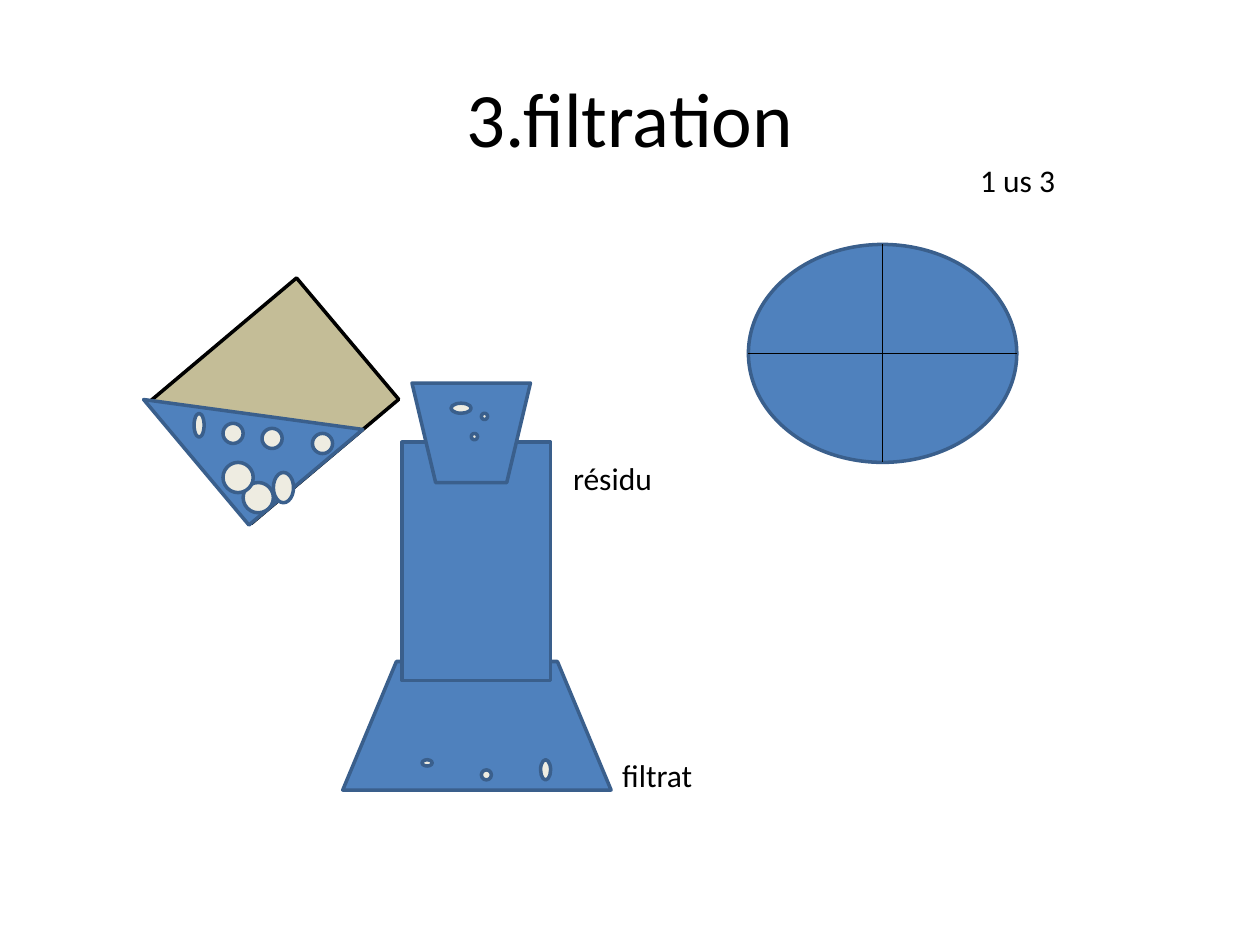
from dataclasses import dataclass
from lxml import etree
from pptx import Presentation
from pptx.dml.color import RGBColor
from pptx.enum.shapes import MSO_CONNECTOR as Line, MSO_SHAPE as Kind
from pptx.enum.text import MSO_ANCHOR as Anchor, PP_ALIGN as Align
from pptx.oxml.ns import qn
from pptx.util import Inches, Pt


@dataclass(frozen=True)
class Theme:
    font: str = "Calibri"
    title: int = 44
    body: int = 18
    edge: float = 2
    thin: float = 0.75
    ink: str = "000000"
    blue: str = "4F81BD"
    rim: str = "3A5F8C"
    tan: str = "C4BD97"
    grain: str = "EEECE1"


THEME = Theme()


def color(code):
    return RGBColor.from_string(code)


def add_text(slide, text, box, size=THEME.body, align=Align.LEFT, anchor=Anchor.TOP):
    frame = slide.shapes.add_textbox(*map(Inches, box)).text_frame
    frame.word_wrap = True
    frame.vertical_anchor = anchor
    para = frame.paragraphs[0]
    para.alignment = align
    run = para.add_run()
    run.text = text
    run.font.name = THEME.font
    run.font.size = Pt(size)
    run.font.color.rgb = color(THEME.ink)


def add_part(slide, kind, box, fill=THEME.blue, line=THEME.rim, turn=0):
    part = slide.shapes.add_shape(kind, *map(Inches, box))
    part.shadow.inherit = False
    part.fill.solid()
    part.fill.fore_color.rgb = color(fill)
    part.line.color.rgb = color(line)
    part.line.width = Pt(THEME.edge)
    part.rotation = turn
    return part


def add_line(slide, *ends):
    line = slide.shapes.add_connector(Line.STRAIGHT, *map(Inches, ends))
    line.line.color.rgb = color(THEME.ink)
    line.line.width = Pt(THEME.thin)
    etree.SubElement(line._element.spPr, qn("a:effectLst"))


def add_grains(slide, left, top, grains):
    for x, y, wide, high in grains:
        add_part(slide, Kind.OVAL, (left + x, top + y, wide, high), fill=THEME.grain)


def draw_beaker(slide, left, top, wide, high):
    """Tilted beaker, with liquid and grains in its lower corner."""
    add_part(slide, Kind.RECTANGLE, (left, top, wide, high),
             fill=THEME.tan, line=THEME.ink, turn=319.9)
    liquid = add_part(slide, Kind.ISOSCELES_TRIANGLE,
                      (left + 0.01, top + 0.09, 1.18, 1.3), turn=320)
    liquid.adjustments[0] = 0
    add_grains(slide, left, top, [
        (0.52, 1.28, 0.24, 0.24), (0.36, 1.12, 0.24, 0.24), (0.76, 1.2, 0.16, 0.24),
        (0.13, 0.73, 0.08, 0.19), (0.67, 0.85, 0.16, 0.16), (1.07, 0.89, 0.16, 0.16),
        (0.36, 0.81, 0.16, 0.16)])


def draw_filter(slide, left, top, wide, high):
    """Flask, neck and funnel, from the base up, with their labels."""
    base = 1.02
    add_part(slide, Kind.FLOWCHART_MANUAL_OPERATION,
             (left, top + high - base, wide, base), turn=180)
    add_part(slide, Kind.RECTANGLE, (left + 0.47, top + 0.47, 1.18, 1.89))
    add_part(slide, Kind.FLOWCHART_MANUAL_OPERATION, (left + 0.55, top, 0.94, 0.79))

    # Residue in the funnel
    add_grains(slide, left, top, [
        (0.86, 0.16, 0.16, 0.08), (1.1, 0.24, 0.05, 0.05), (1.02, 0.4, 0.05, 0.05)])
    add_text(slide, "résidu", (left + 1.73, top + 0.55, 1.57, 0.4))

    # Filtrate in the flask
    add_text(slide, "filtrat", (left + 2.12, top + 2.91, 1.57, 0.4))
    add_grains(slide, left, top, [
        (0.63, 2.99, 0.08, 0.05), (1.1, 3.07, 0.08, 0.08), (1.57, 2.99, 0.08, 0.16)])


def draw_paper(slide, left, top, wide, high):
    """Round filter paper, folded in quarters."""
    add_part(slide, Kind.OVAL, (left, top, wide, high))
    mid_x, mid_y = left + wide / 2, top + high / 2
    add_line(slide, mid_x, top, mid_x, top + high)
    add_line(slide, left + wide, mid_y, left, mid_y)
    add_text(slide, "1 us 3", (left + 1.74, top - 0.71, 0.87, 0.4))


def main():
    deck = Presentation()
    deck.slide_width, deck.slide_height = Inches(10), Inches(7.5)
    slide = deck.slides.add_slide(deck.slide_layouts[6])
    add_text(slide, "3.filtration", (0.5, 0.3, 9, 1.25), size=THEME.title,
             align=Align.CENTER, anchor=Anchor.MIDDLE)
    draw_beaker(slide, 1.41, 2.55, 1.53, 1.26)
    draw_filter(slide, 2.72, 3.04, 2.13, 3.23)
    draw_paper(slide, 5.94, 1.94, 2.13, 1.73)
    deck.save("out.pptx")


if __name__ == "__main__":
    main()
